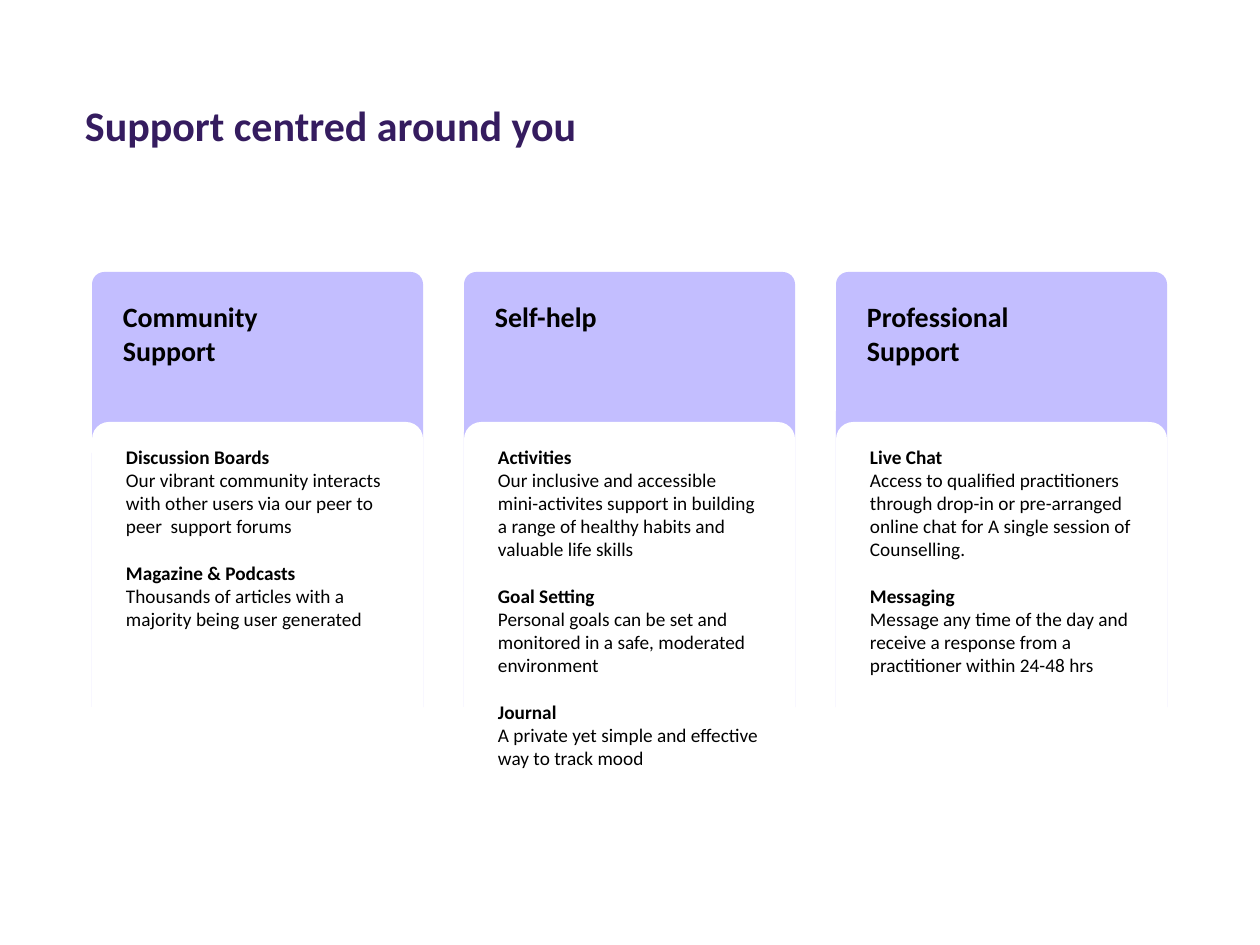
from pptx import Presentation
from pptx.dml.color import RGBColor
from pptx.enum.shapes import MSO_SHAPE
from pptx.enum.text import MSO_ANCHOR
from pptx.util import Emu, Pt

ROUNDED = MSO_SHAPE.ROUNDED_RECTANGLE
TOP = MSO_ANCHOR.TOP

FONT = "Calibri"
LILAC, WHITE, BLACK, PURPLE = "C3BEFF", "FFFFFF", "000000", "351C5F"

# Column grid, in px
FIRST_LEFT, COLUMN_PITCH, CARD_WIDTH = 92, 372, 331
CARD_TOP, CARD_HEIGHT, PANEL_TOP = 272, 447, 422
TEXT_WIDTH, INSET = 287, 13
SECTION_GAP = 13.4

# Heading, panel height, and (title, description) sections of each column
COLUMNS = [
    ("Community\vSupport", 329, [
        ("Discussion Boards",
         "Our vibrant community interacts with other users via our peer to "
         "peer  support forums"),
        ("Magazine & Podcasts",
         "Thousands of articles with a majority being user generated"),
    ]),
    ("Self-help", 470, [
        ("Activities",
         "Our inclusive and accessible mini-activites support in building "
         "a range of healthy habits and valuable life skills"),
        ("Goal Setting",
         "Personal goals can be set and monitored in a safe, moderated "
         "environment"),
        ("Journal", "A private yet simple and effective way to track mood"),
    ]),
    ("Professional\vSupport", 470, [
        ("Live Chat",
         "Access to qualified practitioners through drop-in or pre-arranged "
         "online chat for A single session of Counselling."),
        ("Messaging",
         "Message any time of the day and receive a response from a "
         "practitioner within 24-48 hrs"),
    ]),
]


def px(length):
    return Emu(round(length * 914400 / 126))


def color(hex_value):
    return RGBColor.from_string(hex_value)


def add_card(slide, left, top, height, fill, rounding):
    shape = slide.shapes.add_shape(
        ROUNDED, px(left), px(top), px(CARD_WIDTH), px(height))
    shape.adjustments[0] = rounding
    shape.shadow.inherit = False
    shape.fill.solid()
    shape.fill.fore_color.rgb = color(fill)
    shape.line.fill.background()


def add_text(slide, left, top, width, height, lines, size, text_color=BLACK):
    """Each line is (text, bold, space before in points)."""
    frame = slide.shapes.add_textbox(
        px(left), px(top), px(width), px(height)).text_frame
    frame.word_wrap = True
    frame.vertical_anchor = TOP
    frame.margin_left = frame.margin_right = px(INSET)
    frame.margin_top = frame.margin_bottom = px(INSET)
    for index, (text, bold, space) in enumerate(lines):
        paragraph = frame.add_paragraph() if index else frame.paragraphs[0]
        paragraph.text = text
        paragraph.space_before = Pt(space)
        paragraph.font.name = FONT
        paragraph.font.size = Pt(size)
        paragraph.font.bold = bold
        paragraph.font.color.rgb = color(text_color)


def add_column(slide, left, heading, panel_height, sections):
    # Lilac card with a white panel over its lower part
    add_card(slide, left, CARD_TOP, CARD_HEIGHT, LILAC, 0.037)
    add_card(slide, left, PANEL_TOP, panel_height, WHITE, 0.052)
    add_text(slide, left + 18, 287, TEXT_WIDTH, 132, [(heading, True, 0)], 16)

    # Sections, set apart by one line's height
    lines = []
    for title, description in sections:
        lines.append((title, True, SECTION_GAP if lines else 0))
        lines.append((description, False, 0))
    add_text(slide, left + 21, 432, TEXT_WIDTH, panel_height - 12, lines, 11)


def main():
    presentation = Presentation()
    presentation.slide_width = px(1260)
    presentation.slide_height = px(945)
    slide = presentation.slides.add_slide(presentation.slide_layouts[6])

    # Slide title
    add_text(slide, 72, 87, 1143, 77,
             [("Support centred around you", True, 0)], 24, PURPLE)

    # Support columns
    for index, column in enumerate(COLUMNS):
        add_column(slide, FIRST_LEFT + index * COLUMN_PITCH, *column)

    presentation.save("out.pptx")


if __name__ == "__main__":
    main()
